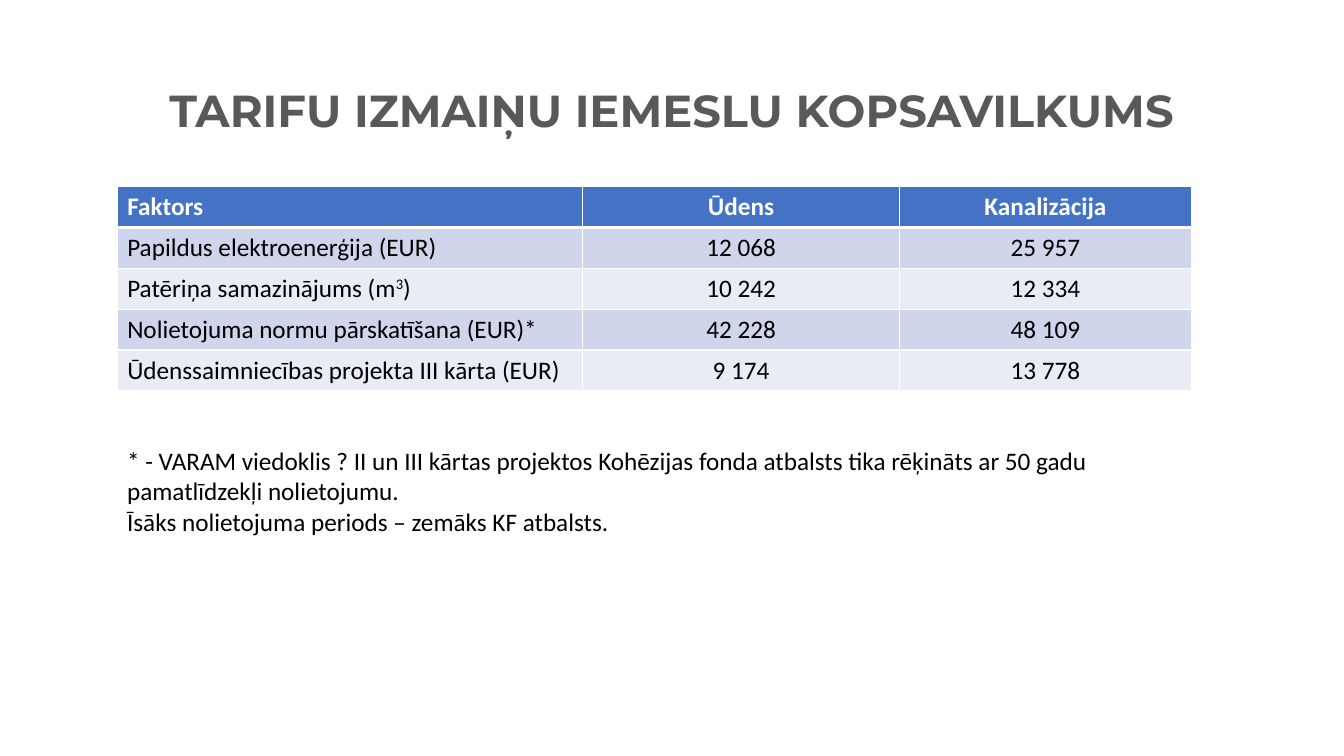
from lxml.etree import SubElement
from pptx import Presentation
from pptx.dml.color import RGBColor
from pptx.enum.text import MSO_ANCHOR, PP_ALIGN
from pptx.oxml.ns import qn
from pptx.util import Pt

HEADERS = ["Faktors", "Ūdens", "Kanalizācija"]
ROWS = [
    ["Papildus elektroenerģija (EUR)", "12 068", "25 957"],
    [["Patēriņa samazinājums (m", ("3", 30), ")"], "10 242", "12 334"],
    ["Nolietojuma normu pārskatīšana (EUR)*", "42 228", "48 109"],
    ["Ūdenssaimniecības projekta III kārta (EUR)", "9 174", "13 778"],
]
NOTES = [
    "* - VARAM viedoklis ? II un III kārtas projektos Kohēzijas fonda atbalsts "
    "tika rēķināts ar 50 gadu pamatlīdzekļi nolietojumu.",
    "Īsāks nolietojuma periods – zemāks KF atbalsts.",
]


def rgb(value):
    return RGBColor.from_string(value)


def write(p, text, size=18, font="Calibri", color="000000", bold=False,
          align=PP_ALIGN.LEFT, spacing=None):
    """Fill a paragraph; text is a string or a list of strings and (text, raise %) pairs."""
    p.alignment = align
    if spacing:
        p.line_spacing = spacing
    for part in [text] if isinstance(text, str) else text:
        content, baseline = (part, 0) if isinstance(part, str) else part
        r = p.add_run()
        r.text = content
        r.font.size, r.font.name, r.font.bold = Pt(size), font, bold
        r.font.color.rgb = rgb(color)
        if baseline:
            r._r.get_or_add_rPr().set("baseline", str(baseline * 1000))


class Deck:
    header_fill = "4472C4"
    band_fills = ["CFD5EA", "E9EBF5"]
    border = "FFFFFF"

    def __init__(self, width, height):
        self.prs = Presentation()
        self.prs.slide_width, self.prs.slide_height = Pt(width), Pt(height)
        self.s = self.prs.slides.add_slide(self.prs.slide_layouts[6])

    def text(self, x, y, w, h, paragraphs, anchor=MSO_ANCHOR.TOP, **style):
        sp = self.s.shapes.add_textbox(Pt(x), Pt(y), Pt(w), Pt(h))
        tf = sp.text_frame
        tf.word_wrap = True
        tf.vertical_anchor = anchor
        for i, text in enumerate(paragraphs):
            write(tf.add_paragraph() if i else tf.paragraphs[0], text, **style)

    def borders(self, cell, **widths):
        tc_pr = cell._tc.get_or_add_tcPr()
        for side in "LRTB":
            ln = SubElement(tc_pr, qn(f"a:ln{side}"), w=str(Pt(widths.get(side, 1))))
            fill = SubElement(ln, qn("a:solidFill"))
            SubElement(fill, qn("a:srgbClr"), val=self.border)

    def table(self, x, y, widths, row_height, rows):
        frame = self.s.shapes.add_table(len(rows), len(widths), Pt(x), Pt(y),
                                        Pt(sum(widths)), Pt(row_height * len(rows)))
        table = frame.table
        for column, width in zip(table.columns, widths):
            column.width = Pt(width)
        for i, row in enumerate(rows):
            table.rows[i].height = Pt(row_height)
            for j, text in enumerate(row):
                cell = table.cell(i, j)
                # Borders come before the fill in the cell properties
                self.borders(cell, B=1 if i else 3, T=3 if i == 1 else 1)
                cell.fill.solid()
                cell.fill.fore_color.rgb = rgb(
                    self.band_fills[(i - 1) % 2] if i else self.header_fill)
                write(cell.text_frame.paragraphs[0], text, bold=i == 0,
                      color="000000" if i else "FFFFFF",
                      align=PP_ALIGN.CENTER if j else PP_ALIGN.LEFT)


def main():
    deck = Deck(960, 540)
    # Title
    deck.text(66, 28.75, 828, 104.4, ["TARIFU IZMAIŅU IEMESLU KOPSAVILKUMS"],
              anchor=MSO_ANCHOR.MIDDLE, size=32, font="Montserrat",
              color="595959", bold=True, align=PP_ALIGN.CENTER, spacing=0.9)
    # Tariff factors
    deck.table(83.7, 133.2, [332.6, 226.1, 208.8], 29.2, [HEADERS] + ROWS)
    # Footnote
    deck.text(83.7, 314.6, 767.5, 72.7, NOTES)
    deck.prs.save("out.pptx")


if __name__ == "__main__":
    main()
